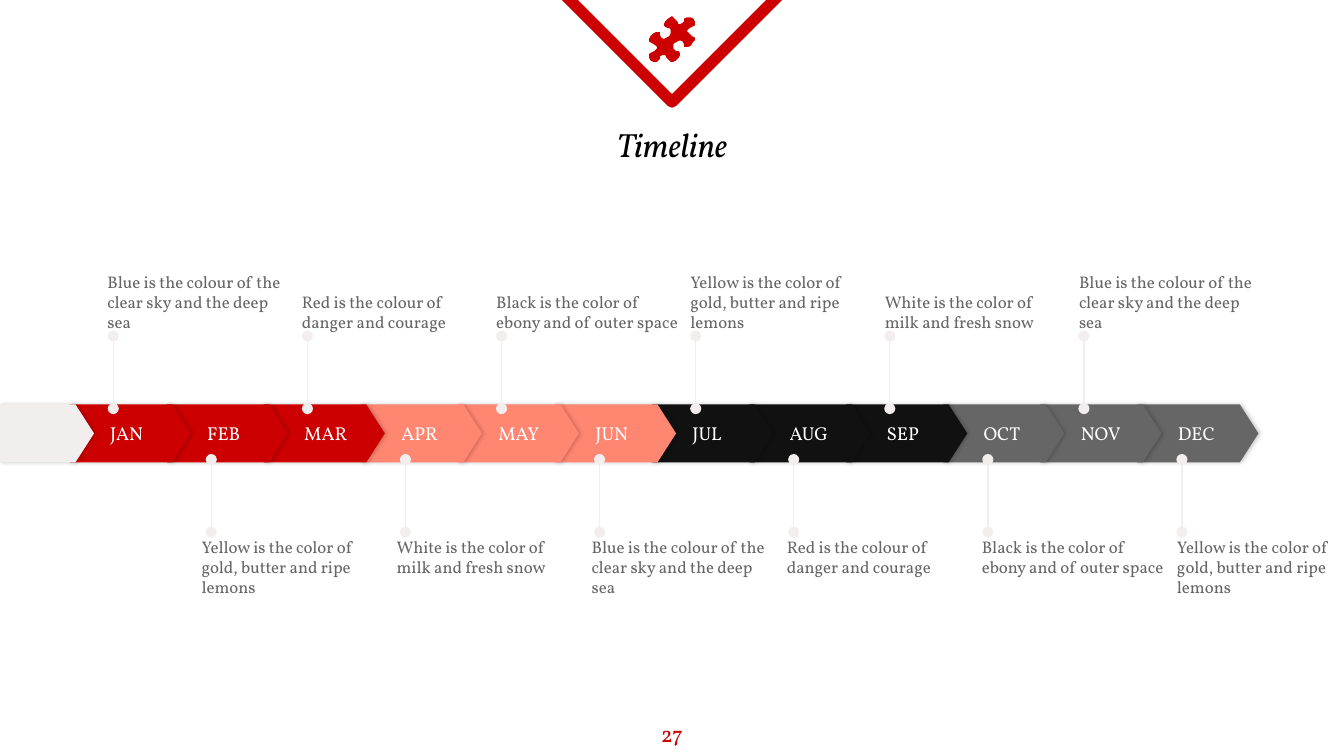
from lxml import etree
from pptx import Presentation, util as u
from pptx.dml.color import RGBColor
from pptx.enum import shapes, text
from pptx.oxml.ns import qn

FONT = "Vollkorn"
RED, SALMON, BLACK, GREY, PALE, WHITE = "CC0000", "FF8671", "111111", "666666", "F3EEEE", "FFFFFF"
MONTHS = ["JAN", "FEB", "MAR", "APR", "MAY", "JUN", "JUL", "AUG", "SEP", "OCT", "NOV", "DEC"]
QUARTER_COLOURS = [RED, SALMON, BLACK, GREY]
BLUE_NOTE = "Blue is the colour of the clear sky and the deep sea"
RED_NOTE = "Red is the colour of danger and courage"
BLACK_NOTE = "Black is the color of ebony and of outer space"
YELLOW_NOTE = "Yellow is the color of gold, butter and ripe lemons"
WHITE_NOTE = "White is the color of milk and fresh snow"
NOTES_ABOVE = [BLUE_NOTE, RED_NOTE, BLACK_NOTE, YELLOW_NOTE, WHITE_NOTE, BLUE_NOTE]
NOTES_BELOW = [YELLOW_NOTE, WHITE_NOTE, BLUE_NOTE, RED_NOTE, BLACK_NOTE, YELLOW_NOTE]
ARROW_TOP, ARROW_WIDTH, ARROW_HEIGHT, ARROW_PITCH = 216.7, 64.8, 31, 52
NOTE_WIDTH, NOTE_HEIGHT, NOTE_RIGHT_LIMIT = 98.6, 41.8, 712
PUZZLE_OUTLINE = [
    (500, 12), (497, 14), (495, 16), (494, 18), (494, 19), (495, 20), (497, 21), (498, 21),
    (499, 22), (499, 25), (498, 27), (496, 28), (494, 29), (492, 28), (491, 26), (491, 24),
    (490, 24), (488, 24), (486, 25), (484, 27), (483, 29), (483, 31), (485, 32), (488, 34),
    (489, 35), (489, 36), (487, 38), (485, 39), (483, 40), (483, 43), (484, 45), (486, 46),
    (489, 46), (491, 44), (491, 42), (493, 41), (495, 41), (496, 43), (498, 45), (499, 46),
    (501, 46), (503, 45), (505, 43), (506, 41), (506, 40), (505, 38), (503, 38), (502, 37),
    (501, 36), (501, 33), (502, 32), (504, 31), (506, 30), (508, 31), (509, 33), (509, 35),
    (510, 35), (512, 35), (514, 34), (516, 31), (517, 30), (517, 28), (515, 27), (512, 24),
    (511, 23), (512, 22), (513, 21), (515, 20), (517, 19), (517, 16), (516, 14), (514, 13),
    (511, 13), (509, 14), (509, 16), (508, 17), (506, 18), (505, 18), (504, 16), (502, 14),
    (501, 13)]


def colour(hex_code):
    """Turn a hex string into a colour."""
    return RGBColor.from_string(hex_code)


def write(shape, content, size=9, ink=GREY, italic=False, align=text.PP_ALIGN.LEFT,
          anchor=text.MSO_ANCHOR.TOP, margins=(0, 0, 0, 0)):
    """Put one formatted paragraph into a shape."""
    frame = shape.text_frame
    frame.word_wrap = True
    frame.vertical_anchor = anchor
    frame.margin_left, frame.margin_top, frame.margin_right, frame.margin_bottom = map(u.Pt, margins)
    paragraph = frame.paragraphs[0]
    paragraph.alignment = align
    run = paragraph.add_run()
    run.text = content
    run.font.name, run.font.size, run.font.italic = FONT, u.Pt(size), italic
    run.font.color.rgb = colour(ink)


def add_text(slide, left, top, width, height, content, **style):
    """Add a text box."""
    box = slide.shapes.add_textbox(u.Pt(left), u.Pt(top), u.Pt(width), u.Pt(height))
    write(box, content, **style)


def add_arrow(slide, left, width, fill):
    """Add a pentagon arrow with a soft shadow."""
    arrow = slide.shapes.add_shape(shapes.MSO_SHAPE.PENTAGON, u.Pt(left), u.Pt(ARROW_TOP),
                                   u.Pt(width), u.Pt(ARROW_HEIGHT))
    arrow.adjustments[0] = 0.32
    arrow.fill.solid()
    arrow.fill.fore_color.rgb = colour(fill)
    arrow.line.fill.background()
    arrow.shadow.inherit = False
    effects = arrow.element.spPr.find(qn("a:effectLst"))
    shadow = etree.SubElement(effects, qn("a:outerShdw"), blurRad=str(u.Pt(2.2)),
                              dist=str(u.Pt(0.8)), dir="0", algn="ctr", rotWithShape="0")
    black = etree.SubElement(shadow, qn("a:srgbClr"), val="000000")
    etree.SubElement(black, qn("a:alpha"), val="20000")
    return arrow


def add_pin(slide, x, start, end):
    """Add a vertical line with a dot at each end."""
    pin = slide.shapes.add_connector(shapes.MSO_CONNECTOR.STRAIGHT,
                                     u.Pt(x), u.Pt(start), u.Pt(x), u.Pt(end))
    pin.line.color.rgb = colour(PALE)
    pin.line.width = u.Pt(0.75)
    properties = pin.element.spPr
    line = properties.find(qn("a:ln"))
    for end_tag in ("a:headEnd", "a:tailEnd"):
        etree.SubElement(line, qn(end_tag), type="oval")
    etree.SubElement(properties, qn("a:effectLst"))


def add_header(slide):
    """Add the downward triangle, title and page number."""
    triangle = slide.shapes.add_shape(shapes.MSO_SHAPE.ISOSCELES_TRIANGLE,
                                      u.Pt(301), u.Pt(-4.3), u.Pt(118), u.Pt(59))
    triangle.rotation = 180
    triangle.fill.background()
    triangle.line.color.rgb = colour(RED)
    triangle.line.width = u.Pt(6)
    triangle.shadow.inherit = False
    centred = {"align": text.PP_ALIGN.CENTER, "margins": (7.2,) * 4}
    add_text(slide, 81.4, 59, 557.2, 42.5, "Timeline", size=18, ink="000000", italic=True, **centred)
    add_text(slide, 0, 378.7, 720, 25.9, "27", size=12, ink=RED, **centred)


def add_months(slide):
    """Add the overlapping month arrows, last month at the back."""
    for index, month in reversed(list(enumerate(MONTHS))):
        arrow = add_arrow(slide, 37.4 + index * ARROW_PITCH, ARROW_WIDTH, QUARTER_COLOURS[index // 3])
        write(arrow, month, size=10, ink=WHITE, anchor=text.MSO_ANCHOR.MIDDLE, margins=(21.6, 0, 0, 0))
    add_arrow(slide, 0, 50.4, PALE)


def add_notes(slide, notes, pin_left, pin_ends, note_left, note_pitch, note_top, anchor):
    """Add a row of pinned notes, one for every second month."""
    for index, note in enumerate(notes):
        add_pin(slide, pin_left + index * 2 * ARROW_PITCH, *pin_ends)
        left = note_left + index * note_pitch
        width = min(NOTE_WIDTH, NOTE_RIGHT_LIMIT - left)
        add_text(slide, left, note_top, width, NOTE_HEIGHT, note, anchor=anchor)


def add_puzzle_piece(slide):
    """Add the puzzle piece icon, outlined in hundredths of an inch."""
    builder = slide.shapes.build_freeform(*PUZZLE_OUTLINE[0], scale=u.Pt(0.72))
    builder.add_line_segments(PUZZLE_OUTLINE[1:], close=True)
    piece = builder.convert_to_shape()
    piece.fill.solid()
    piece.fill.fore_color.rgb = colour(RED)
    piece.line.fill.background()
    piece.shadow.inherit = False


def main():
    """Build and save the timeline slide."""
    presentation = Presentation()
    presentation.slide_width, presentation.slide_height = u.Pt(720), u.Pt(405)
    slide = presentation.slides.add_slide(presentation.slide_layouts[6])
    add_header(slide)
    add_months(slide)
    add_notes(slide, NOTES_ABOVE, 60.7, (218.9, 180), 57.6, 104.1, 136.1, text.MSO_ANCHOR.BOTTOM)
    add_notes(slide, NOTES_BELOW, 113.2, (285.1, 246.2), 108, 104.5, 287.3, text.MSO_ANCHOR.TOP)
    add_puzzle_piece(slide)
    presentation.save("out.pptx")


if __name__ == "__main__":
    main()
